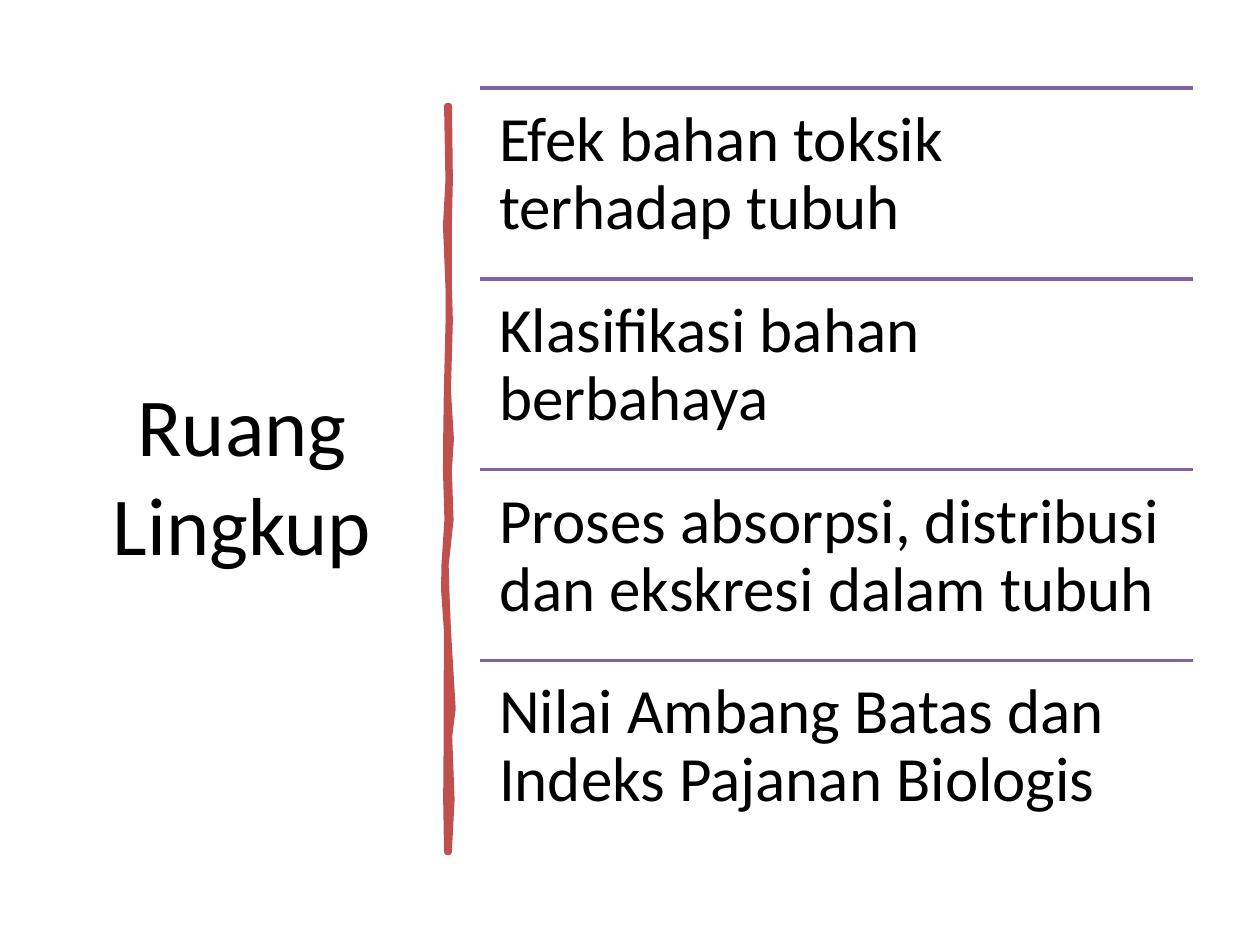
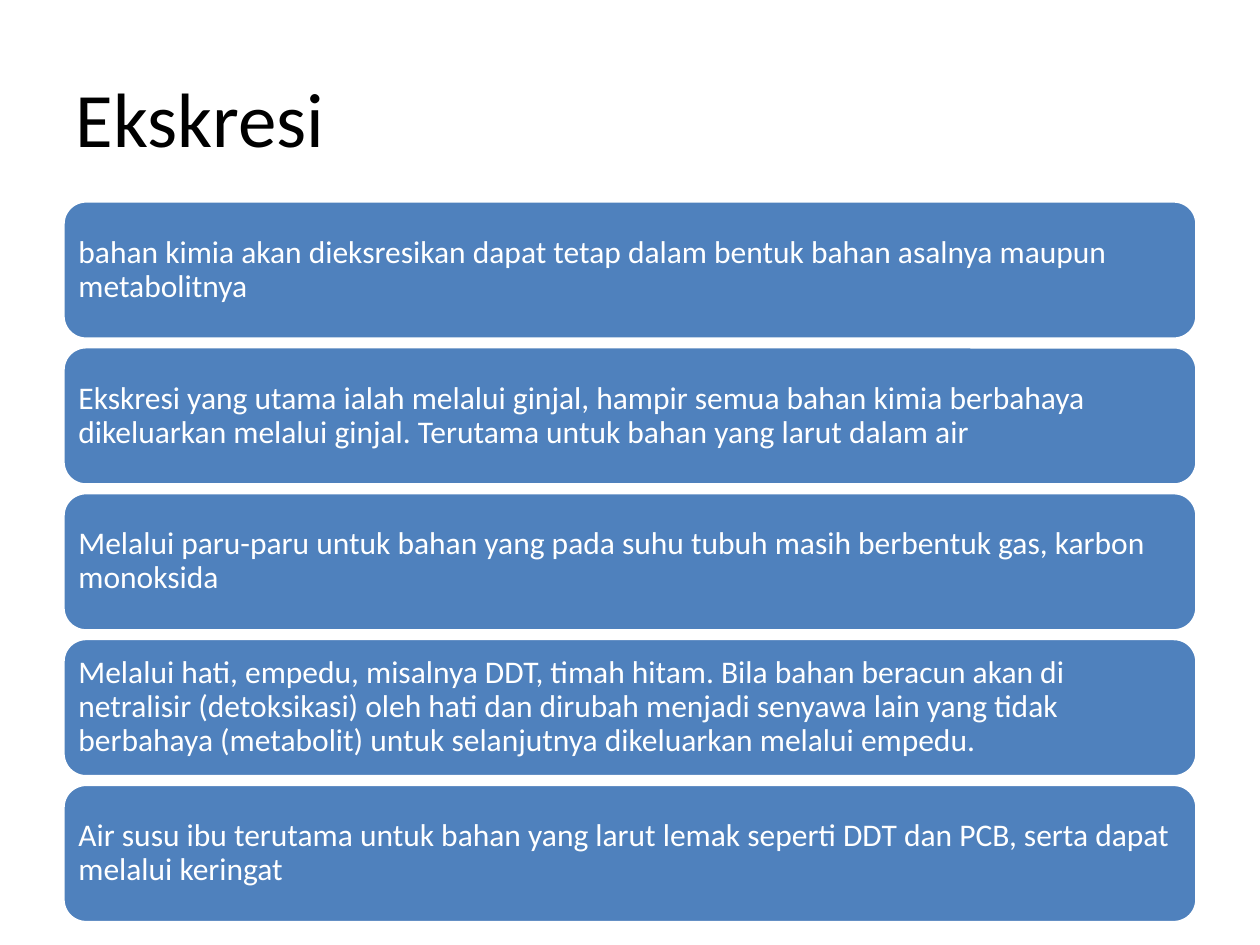
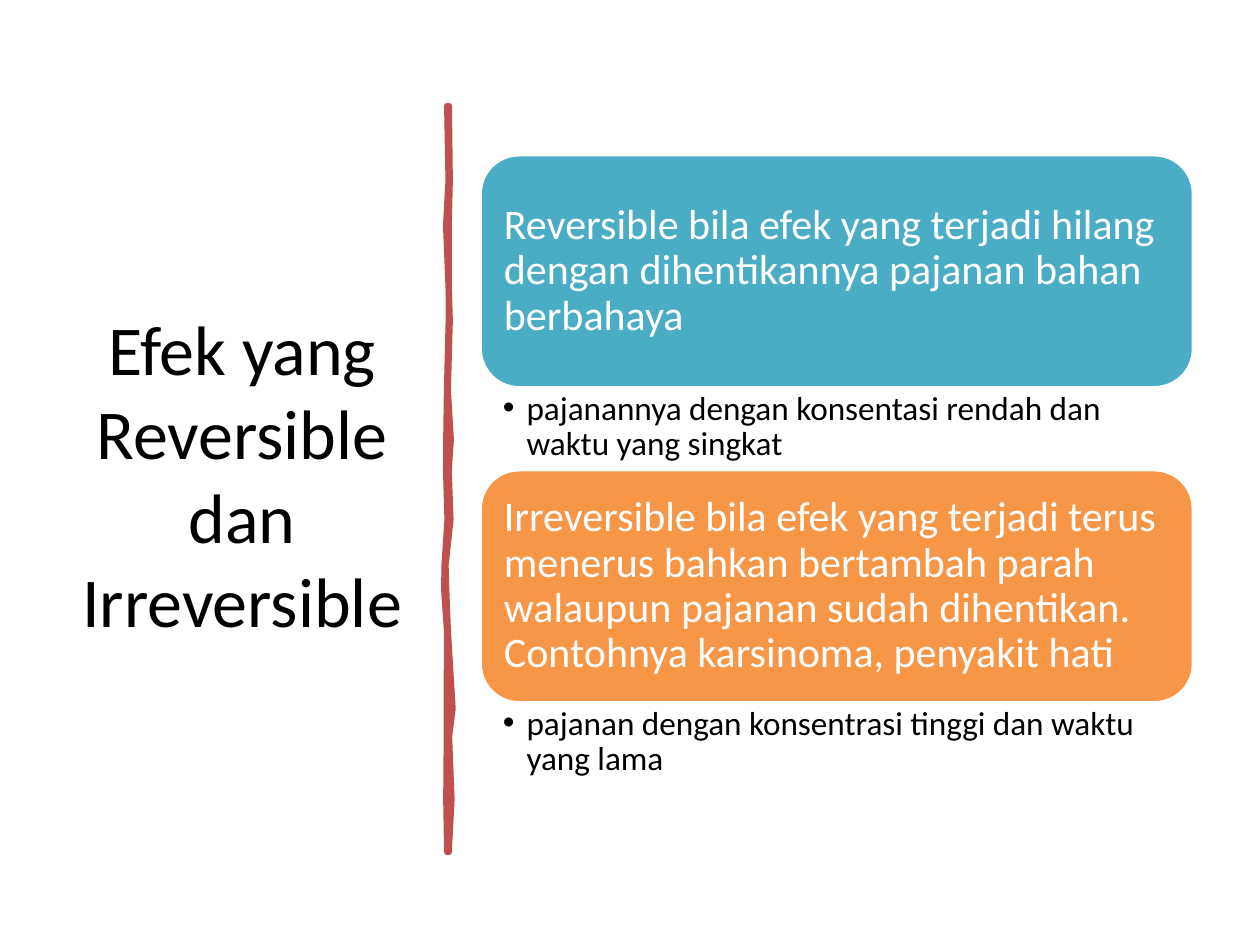
from lxml import etree
from pptx import Presentation
from pptx.dml.color import RGBColor
from pptx.enum import shapes, text
from pptx.oxml import ns
from pptx.util import Pt

BLACK = RGBColor(0x00, 0x00, 0x00)
WHITE = RGBColor(0xFF, 0xFF, 0xFF)
RED = RGBColor(0xC0, 0x50, 0x4D)
PURPLE = RGBColor(0x80, 0x64, 0xA2)
BLUE = RGBColor(0x4F, 0x81, 0xBD)
TEAL = RGBColor(0x4B, 0xAC, 0xC6)
ORANGE = RGBColor(0xF7, 0x96, 0x46)

SIDE_TITLE = (37.5, 50.4, 201.6, 440)
TOP_TITLE = (36, 21.6, 648, 90)
CONTENT_LEFT, CONTENT_WIDTH = 274.4, 407.6

# Brush stroke outline: y, left edge, right edge
BRUSH = [
    (60.5, 255.4, 256.7), (103, 256.2, 257.2), (129, 254.8, 256.6),
    (166, 256.3, 256.7), (183, 256.3, 257.2), (223, 255.3, 256.1),
    (251, 254.9, 257.8), (269, 254.8, 256.6), (297, 255.6, 257.6),
    (323, 253.9, 254.8), (337, 253.7, 255.2), (360, 255.3, 256.1),
    (405, 255.2, 258.8), (421, 255.2, 256.8), (457, 254.9, 258.2),
    (487, 255.4, 256.6),
]

SCOPE = [
    "Efek bahan toksik terhadap tubuh",
    "Klasifikasi bahan berbahaya",
    "Proses absorpsi, distribusi dan ekskresi dalam tubuh",
    "Nilai Ambang Batas dan Indeks Pajanan Biologis",
]
EXCRETION = [
    "bahan kimia akan dieksresikan dapat tetap dalam bentuk bahan asalnya maupun metabolitnya",
    "Ekskresi yang utama ialah melalui ginjal, hampir semua bahan kimia berbahaya "
    "dikeluarkan melalui ginjal. Terutama untuk bahan yang larut dalam air",
    "Melalui paru-paru untuk bahan yang pada suhu tubuh masih berbentuk gas, karbon monoksida",
    "Melalui hati, empedu, misalnya DDT, timah hitam. Bila bahan beracun akan di netralisir "
    "(detoksikasi) oleh hati dan dirubah menjadi senyawa lain yang tidak berbahaya (metabolit) "
    "untuk selanjutnya dikeluarkan melalui empedu.",
    "Air susu ibu terutama untuk bahan yang larut lemak seperti DDT dan PCB, serta dapat "
    "melalui keringat",
]
EFFECTS = [
    (TEAL,
     "Reversible bila efek yang terjadi hilang dengan dihentikannya pajanan bahan berbahaya",
     "pajanannya dengan konsentasi rendah dan waktu yang singkat"),
    (ORANGE,
     "Irreversible bila efek yang terjadi terus menerus bahkan bertambah parah walaupun "
     "pajanan sudah dihentikan. Contohnya karsinoma, penyakit hati",
     "pajanan dengan konsentrasi tinggi dan waktu yang lama"),
]


def set_all(target, values):
    for name, value in values.items():
        setattr(target, name, value)


class Deck:
    font = "Calibri"

    def __init__(self):
        self.deck = Presentation()
        set_all(self.deck, {"slide_width": Pt(720), "slide_height": Pt(540)})
        self.page = None

    def fill_text(self, box, words, size, color, margins, spacing=0.9,
                  anchor=text.MSO_ANCHOR.MIDDLE, align=text.PP_ALIGN.LEFT):
        frame = box.text_frame
        frame.text = words
        left, top, right, bottom = (Pt(margin) for margin in margins)
        set_all(frame, {
            "word_wrap": True, "auto_size": text.MSO_AUTO_SIZE.NONE,
            "vertical_anchor": anchor, "margin_left": left, "margin_top": top,
            "margin_right": right, "margin_bottom": bottom,
        })
        para = frame.paragraphs[0]
        set_all(para, {"alignment": align, "line_spacing": spacing})
        span = para.runs[0]
        set_all(span.font, {"name": self.font, "size": Pt(size)})
        span.font.color.rgb = color
        return para

    def new_page(self, title, area, size, align):
        self.page = self.deck.slides.add_slide(self.deck.slide_layouts[5])
        box = self.page.shapes.title
        set_all(box, dict(zip(("left", "top", "width", "height"), map(Pt, area))))
        self.fill_text(box, title, size, BLACK, (7.2, 3.6, 7.2, 3.6), 1.0, align=align)

    def side_page(self, title, size):
        """Start a page with its title left of the brush stroke."""
        self.new_page(title, SIDE_TITLE, size, text.PP_ALIGN.CENTER)
        right_edge = [(Pt(right), Pt(y)) for y, _, right in BRUSH]
        left_edge = [(Pt(left), Pt(y)) for y, left, _ in reversed(BRUSH)]
        outline = self.page.shapes.build_freeform(*right_edge[0])
        outline.add_line_segments(right_edge[1:] + left_edge, close=True)
        self.paint(outline.convert_to_shape(), RED, RED, 3.25)

    def paint(self, shape, fill, line, width):
        shape.shadow.inherit = False
        shape.fill.solid()
        shape.fill.fore_color.rgb = fill
        shape.line.color.rgb = line
        shape.line.width = Pt(width)

    def card(self, area, fill, words, size, margin):
        box = self.page.shapes.add_shape(
            shapes.MSO_SHAPE.ROUNDED_RECTANGLE, *map(Pt, area))
        self.paint(box, fill, WHITE, 2)
        self.fill_text(box, words, size, WHITE, [margin] * 4)

    def label(self, area, words, size, margins):
        box = self.page.shapes.add_textbox(*map(Pt, area))
        return self.fill_text(box, words, size, BLACK, margins, anchor=text.MSO_ANCHOR.TOP)

    def bullet(self, area, words, size):
        para = self.label(area, words, size, (13, 2, 13.7, 2))
        properties = para._p.get_or_add_pPr()
        properties.set("marL", str(Pt(13.5)))
        properties.set("indent", str(-Pt(13.5)))
        etree.SubElement(properties, ns.qn("a:buFont"), typeface="Arial")
        etree.SubElement(properties, ns.qn("a:buChar"), char="•")

    def rule(self, left, top, width):
        line = self.page.shapes.add_connector(
            shapes.MSO_CONNECTOR.STRAIGHT, Pt(left), Pt(top), Pt(left + width), Pt(top))
        line.line.color.rgb = PURPLE
        line.line.width = Pt(2)
        etree.SubElement(line._element.spPr, ns.qn("a:effectLst"))


def scope_page(deck):
    deck.side_page("Ruang Lingkup", 47)
    pitch = 109
    for row, words in enumerate(SCOPE):
        top = 50.4 + row * pitch
        deck.rule(CONTENT_LEFT, top, CONTENT_WIDTH)
        deck.label((CONTENT_LEFT, top, CONTENT_WIDTH, pitch), words, 36, [10.8] * 4)


def excretion_page(deck):
    deck.new_page("Ekskresi", TOP_TITLE, 44, text.PP_ALIGN.LEFT)
    for row, words in enumerate(EXCRETION):
        deck.card((36, 114.8 + row * 83.35, 648, 79), BLUE, words, 18, 5)


def effects_page(deck):
    deck.side_page("Efek yang Reversible dan Irreversible", 40)
    card_height, note_height = 133.2, 46.8
    for row, (color, effect, exposure) in enumerate(EFFECTS):
        top = 88.4 + row * (card_height + note_height)
        deck.card((CONTENT_LEFT, top, CONTENT_WIDTH, card_height), color, effect, 24, 7.2)
        deck.bullet((CONTENT_LEFT, top + card_height, CONTENT_WIDTH, note_height), exposure, 19)


def main():
    deck = Deck()
    scope_page(deck)
    excretion_page(deck)
    effects_page(deck)
    deck.deck.save("out.pptx")


if __name__ == "__main__":
    main()
